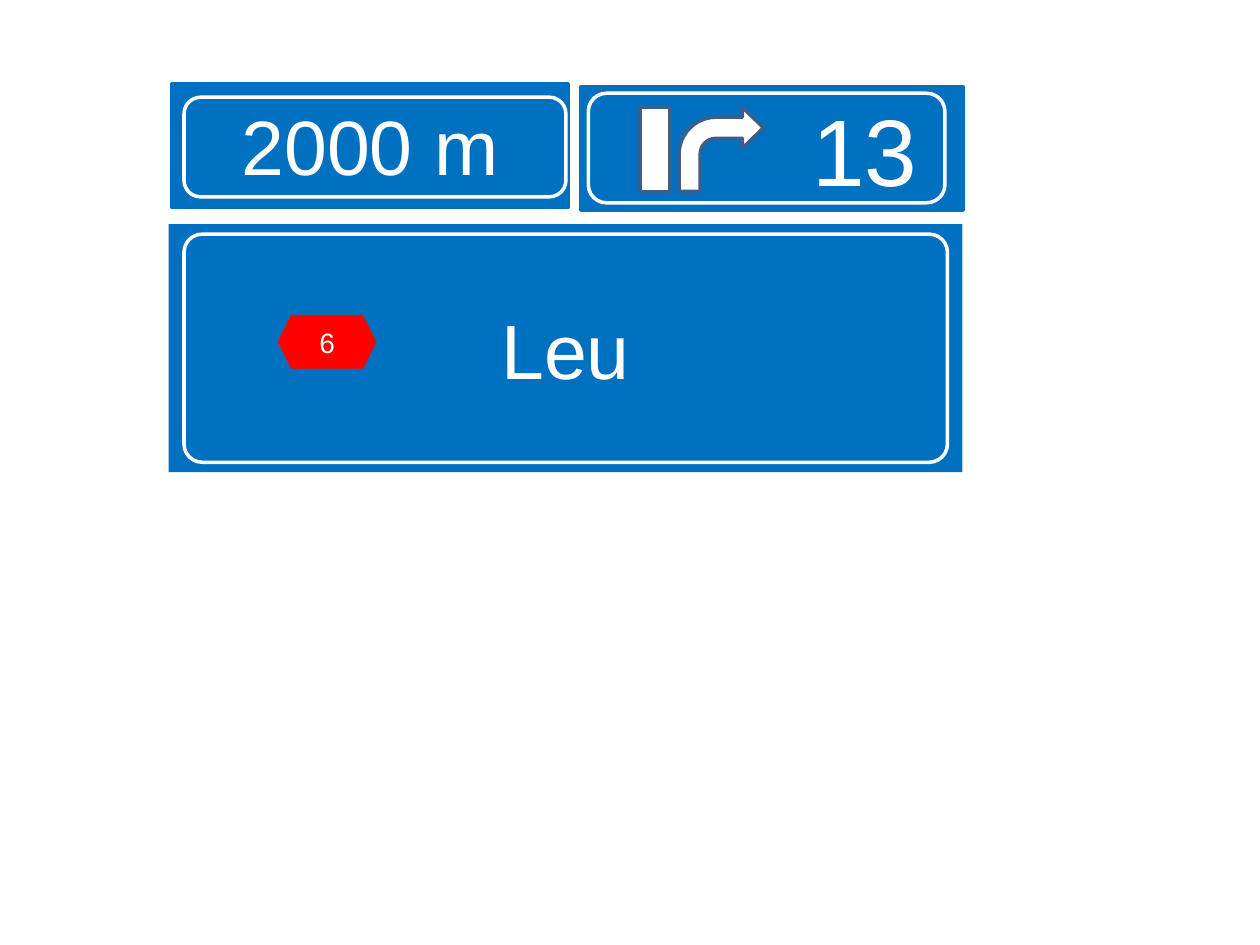
from dataclasses import dataclass
from typing import Optional

from pptx import Presentation
from pptx import util as u
from pptx.dml.color import RGBColor
from pptx.enum import shapes, text

COLORS = {"sign": "0070C0", "white": "FFFFFF", "edge": "3A5F8C", "route": "FF0000"}
KIND = shapes.MSO_SHAPE


@dataclass
class Part:
    kind: shapes.MSO_SHAPE
    box: tuple[float, float, float, float]
    fill: Optional[str] = None
    line: str = "white"
    width: float = 2
    adj: tuple[float, ...] = ()
    label: str = ""
    size: int = 44
    left: float = 0


PARTS = [
    Part(KIND.ROUNDED_RECTANGLE, (3.46, 1.68, 8, 2.49), "sign", "sign",
         adj=(0,), label="2000 m"),
    Part(KIND.ROUNDED_RECTANGLE, (11.71, 1.75, 7.7, 2.49), "sign", "sign",
         adj=(0,), label="13", size=54, left=3.75),
    Part(KIND.RECTANGLE, (12.9, 2.16, 0.61, 1.7), "white", "edge"),
    Part(KIND.BENT_ARROW, (13.69, 2.16, 1.7, 1.7), "white", "edge",
         adj=(0.25, 0.245, 0.25, 0.438)),
    Part(KIND.HEXAGON, (5.59, 6.35, 2.01, 1.09), "route", "edge", 0.5,
         label="6", size=16),
    Part(KIND.ROUNDED_RECTANGLE, (3.71, 1.96, 7.7, 2.01)),
    Part(KIND.ROUNDED_RECTANGLE, (11.86, 1.88, 7.19, 2.21)),
    Part(KIND.ROUNDED_RECTANGLE, (3.71, 4.72, 15.39, 4.6), adj=(0.08,)),
]


def rgb(name: str) -> RGBColor:
    return RGBColor.from_string(COLORS[name])


def write(sp, label: str, *, size: int = 44, color: str = "white",
          font: str = "Arial", left: float = 0) -> None:
    tf = sp.text_frame
    tf.word_wrap = True
    tf.auto_size = text.MSO_AUTO_SIZE.NONE
    tf.vertical_anchor = text.MSO_ANCHOR.MIDDLE
    tf.margin_left = u.Cm(left)
    tf.margin_right = tf.margin_top = tf.margin_bottom = 0
    p = tf.paragraphs[0]
    p.alignment = text.PP_ALIGN.CENTER
    r = p.add_run()
    r.text = label
    r.font.name = font
    r.font.size = u.Pt(size)
    r.font.color.rgb = rgb(color)


def draw(s, part: Part) -> None:
    sp = s.shapes.add_shape(part.kind, *map(u.Cm, part.box))
    sp.shadow.inherit = False
    for i, value in enumerate(part.adj):
        sp.adjustments[i] = value
    if part.fill:
        sp.fill.solid()
        sp.fill.fore_color.rgb = rgb(part.fill)
    else:
        sp.fill.background()
    sp.line.color.rgb = rgb(part.line)
    sp.line.width = u.Pt(part.width)
    if part.label:
        write(sp, part.label, size=part.size, left=part.left)


def draw_destination(s) -> None:
    sp = s.shapes.title
    sp.left, sp.top, sp.width, sp.height = map(u.Cm, (3.4, 4.52, 16, 5))
    sp.fill.solid()
    sp.fill.fore_color.rgb = rgb("sign")
    write(sp, "Leu")


def main() -> None:
    prs = Presentation()
    prs.slide_width, prs.slide_height = u.Cm(25.4), u.Cm(19.05)
    s = prs.slides.add_slide(prs.slide_layouts[5])
    draw_destination(s)
    for part in PARTS:
        draw(s, part)
    prs.save("out.pptx")


if __name__ == "__main__":
    main()
